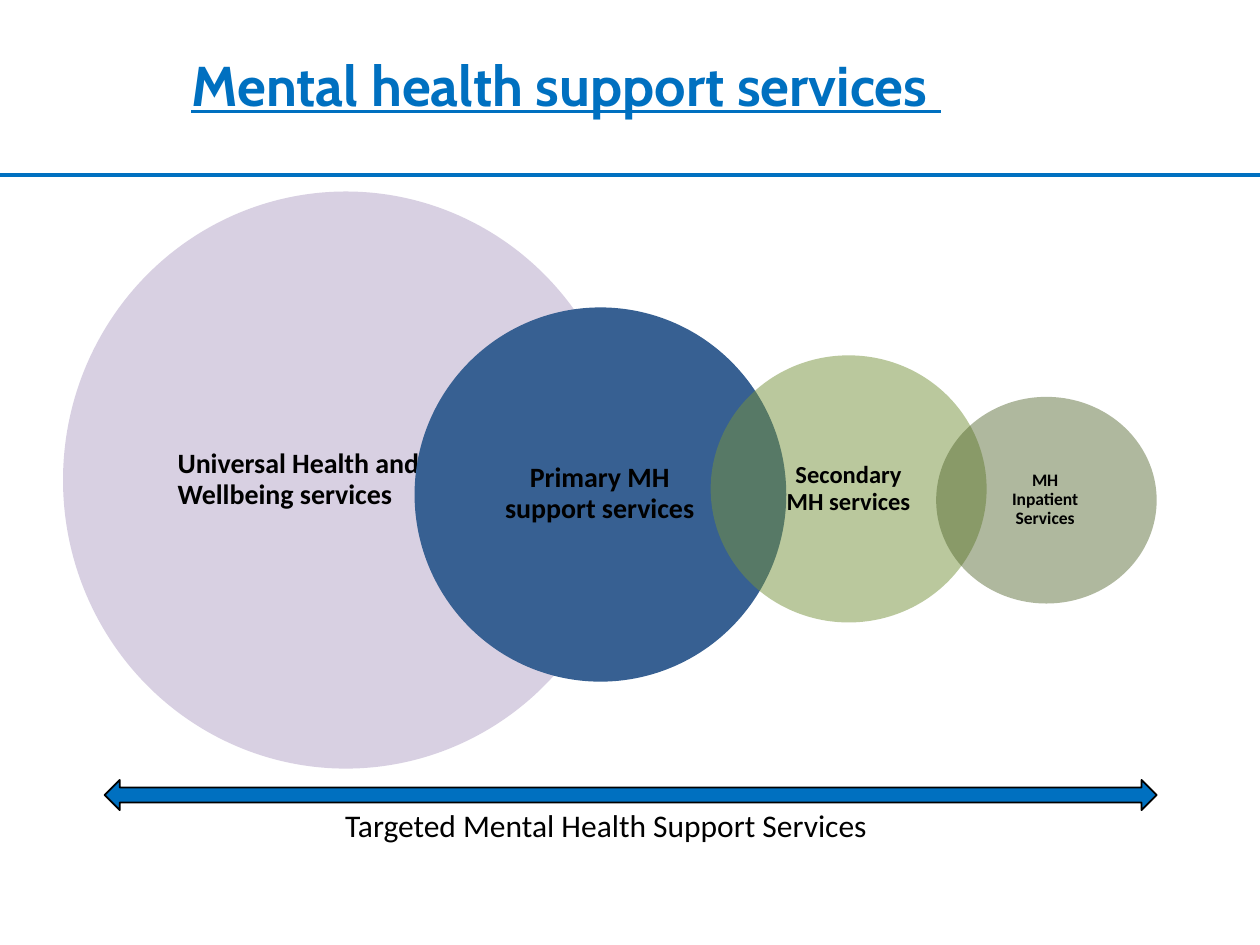
"""Build a slide of overlapping circles showing mental health support services."""
from dataclasses import dataclass

from lxml import etree
from pptx import Presentation
from pptx.dml.color import RGBColor
from pptx.enum import shapes, text
from pptx.oxml.ns import qn
from pptx.util import Inches, Pt

COLOURS = {
    "blue": "0070C0",
    "black": "000000",
    "lilac": "B3A2C7",
    "navy": "376092",
    "green": "77933C",
    "olive": "4F6228",
}

Box = tuple[float, float, float, float]


@dataclass(frozen=True)
class Label:
    wording: str
    box: Box
    size: int
    font: str = "Calibri"
    colour: str = "black"
    bold: bool = False
    underline: bool = False
    align: text.PP_ALIGN = text.PP_ALIGN.LEFT
    anchor: text.MSO_ANCHOR = text.MSO_ANCHOR.TOP
    margins: tuple[float, float] = (0.1, 0.05)
    line_spacing: float = 1.0


@dataclass(frozen=True)
class Service:
    name: str
    circle: Box
    label_box: Box
    colour: str
    opacity: int
    size: int
    align: text.PP_ALIGN = text.PP_ALIGN.CENTER
    margin: float = 0.02


SERVICES = [
    Service("Universal Health and Wellbeing services", (0.5, 1.52, 4.49, 4.58),
            (1.16, 2.19, 3.17, 3.24), "lilac", 50, 16, text.PP_ALIGN.LEFT),
    Service("Primary MH support services", (3.29, 2.44, 2.95, 2.97),
            (3.72, 2.87, 2.08, 2.1), "navy", 100, 16),
    Service("Secondary MH services", (5.64, 2.82, 2.19, 2.12),
            (5.96, 3.13, 1.55, 1.5), "green", 50, 14),
    Service("MH Inpatient Services", (7.43, 3.15, 1.75, 1.64),
            (7.68, 3.39, 1.23, 1.16), "olive", 45, 10, margin=0.01),
]
TITLE = Label("Mental health support services ", (1.42, 0.35, 7.17, 0.64), 32,
              font="Cabin", colour="blue", bold=True, underline=True)
CAPTION = Label("Targeted Mental Health Support Services", (2.64, 6.35, 4.72, 0.4), 18)


def rgb(name: str) -> RGBColor:
    """Return the named colour."""
    return RGBColor.from_string(COLOURS[name])


def add_filled_shape(slide, kind: shapes.MSO_SHAPE, box: Box, colour: str, opacity: int = 100):
    """Add a filled preset shape without outline or shadow."""
    shape = slide.shapes.add_shape(kind, *map(Inches, box))
    shape.shadow.inherit = False
    shape.fill.solid()
    shape.fill.fore_color.rgb = rgb(colour)
    shape.line.fill.background()
    if opacity < 100:
        colour_element = shape.fill._xPr.find(qn("a:solidFill"))[0]
        etree.SubElement(colour_element, qn("a:alpha")).set("val", str(opacity * 1000))
    return shape


def add_label(slide, label: Label) -> None:
    """Add a text box holding one styled run."""
    frame = slide.shapes.add_textbox(*map(Inches, label.box)).text_frame
    frame.word_wrap = True
    frame.vertical_anchor = label.anchor
    frame.margin_left = frame.margin_right = Inches(label.margins[0])
    frame.margin_top = frame.margin_bottom = Inches(label.margins[1])
    paragraph = frame.paragraphs[0]
    paragraph.alignment = label.align
    paragraph.line_spacing = label.line_spacing
    run = paragraph.add_run()
    run.text = label.wording
    run.font.name = label.font
    run.font.size = Pt(label.size)
    run.font.bold = label.bold
    run.font.underline = label.underline
    run.font.color.rgb = rgb(label.colour)


def add_service(slide, service: Service) -> None:
    """Add a service circle and its label."""
    add_filled_shape(slide, shapes.MSO_SHAPE.OVAL, service.circle, service.colour, service.opacity)
    add_label(slide, Label(service.name, service.label_box, service.size, bold=True,
                           align=service.align, anchor=text.MSO_ANCHOR.MIDDLE,
                           margins=(0.25, service.margin), line_spacing=0.9))


def add_rule(slide, top: float, width: float) -> None:
    """Add the horizontal rule below the title."""
    rule = slide.shapes.add_connector(shapes.MSO_CONNECTOR.STRAIGHT, Inches(0), Inches(top),
                                      Inches(width), Inches(top))
    rule.line.color.rgb = rgb("blue")
    rule.line.width = Pt(2.25)
    etree.SubElement(rule._element.spPr, qn("a:effectLst"))


def main() -> None:
    """Build and save the presentation."""
    presentation = Presentation()
    presentation.slide_width, presentation.slide_height = Inches(10), Inches(7.5)
    slide = presentation.slides.add_slide(presentation.slide_layouts[6])
    add_rule(slide, 1.39, 10)
    add_label(slide, TITLE)
    for service in SERVICES:
        add_service(slide, service)
    arrow = add_filled_shape(slide, shapes.MSO_SHAPE.LEFT_RIGHT_ARROW,
                             (0.83, 6.19, 8.35, 0.24), "blue")
    arrow.line.color.rgb = rgb("black")
    arrow.line.width = Pt(1)
    add_label(slide, CAPTION)
    presentation.save("out.pptx")


if __name__ == "__main__":
    main()
